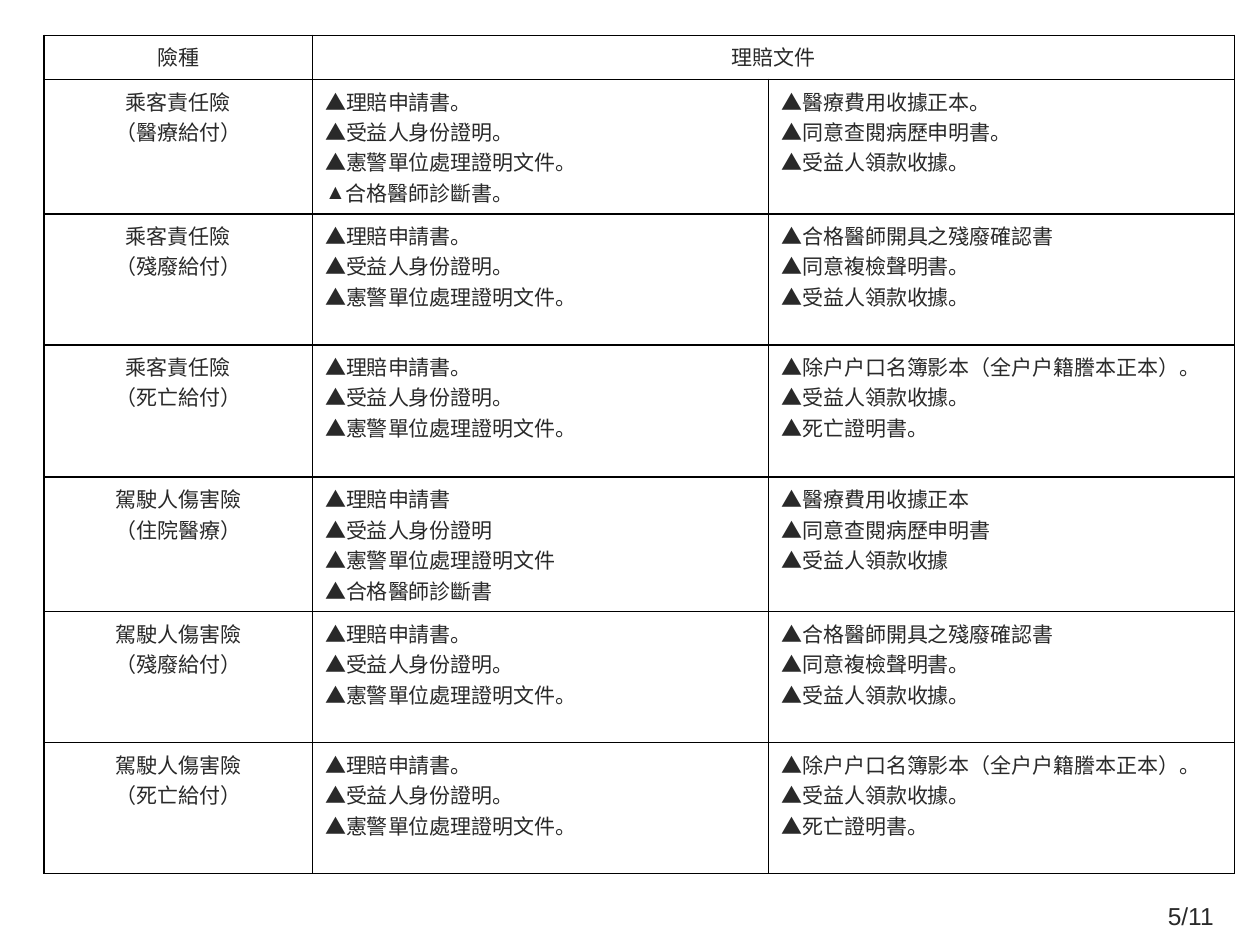
from lxml.etree import SubElement
from pptx import Presentation
from pptx.dml.color import RGBColor
from pptx.enum.text import MSO_AUTO_SIZE, PP_ALIGN
from pptx.oxml.ns import qn
from pptx.util import Inches, Pt

COLORS = {"text": "292929", "line": "000000"}
SERIF, SANS, CJK = "Times New Roman", "Arial", "Noto Sans CJK TC"
MARK = "▲"

# Documents shared by several claims
BASE = ["理賠申請書", "受益人身份證明", "憲警單位處理證明文件"]
DOCTOR = "合格醫師診斷書"
MEDICAL = ["醫療費用收據正本", "同意查閱病歷申明書", "受益人領款收據"]


def mark(items, stop="。"):
    return [MARK + item + stop for item in items]


DISABLED = [MARK + "合格醫師開具之殘廢確認書"] + mark(["同意複檢聲明書", "受益人領款收據"])
DEATH = mark(["除戶戶口名簿影本（全戶戶籍謄本正本）", "受益人領款收據", "死亡證明書"])
RIDER, DRIVER = "乘客責任險", "駕駛人傷害險"

CLAIMS = [
    ([RIDER, "（醫療給付）"], mark(BASE) + [DOCTOR + "。"], mark(MEDICAL)),
    ([RIDER, "（殘廢給付）"], mark(BASE), DISABLED),
    ([RIDER, "（死亡給付）"], mark(BASE), DEATH),
    ([DRIVER, "（住院醫療）"], mark(BASE + [DOCTOR], ""), mark(MEDICAL, "")),
    ([DRIVER, "（殘廢給付）"], mark(BASE), DISABLED),
    ([DRIVER, "（死亡給付）"], mark(BASE), DEATH),
]
COLS = [2.13, 3.62, 3.7]
ROWS = [0.35, 1.05, 1.04, 1.05, 1.05, 1.04, 1.04]


def style(para, font, size):
    for run in para.runs:
        run.font.name = font
        run.font.size = Pt(size)
        run.font.color.rgb = RGBColor.from_string(COLORS["text"])
        SubElement(run.font._element, qn("a:ea"), typeface=CJK)


def add_bullet(para):
    props = para._p.get_or_add_pPr()
    props.set("marL", "0")
    props.set("indent", "0")
    SubElement(props, qn("a:buFont"), typeface=SERIF)
    SubElement(props, qn("a:buChar"), char=MARK)


def add_border(cell):
    props = cell._tc.get_or_add_tcPr()
    for side in ("lnL", "lnR", "lnT", "lnB"):
        line = SubElement(props, qn("a:" + side), w=str(Pt(1)))
        fill = SubElement(line, qn("a:solidFill"))
        SubElement(fill, qn("a:srgbClr"), val=COLORS["line"])


def fill_cell(cell, lines, font, align=None):
    cell.text_frame.text = "\n".join(lines)
    for para in cell.text_frame.paragraphs:
        para.alignment = align
        # A document without its own mark gets a real bullet
        if align is None and not para.text.startswith(MARK):
            add_bullet(para)
        style(para, font, 12)


def add_claims(slide, left, top, width, height):
    frame = slide.shapes.add_table(len(ROWS), len(COLS), left, top, width, height)
    table = frame.table
    table.first_row = table.horz_banding = False
    for col, size in zip(table.columns, COLS):
        col.width = Inches(size)
    for row, size in zip(table.rows, ROWS):
        row.height = Inches(size)
    for cell in table.iter_cells():
        add_border(cell)
        cell.fill.background()

    # Header
    table.cell(0, 1).merge(table.cell(0, 2))
    for col, title in enumerate(["險種", "理賠文件"]):
        fill_cell(table.cell(0, col), [title], SERIF, PP_ALIGN.CENTER)

    # One row for each claim
    for row, (name, first, second) in enumerate(CLAIMS, 1):
        fill_cell(table.cell(row, 0), name, SERIF, PP_ALIGN.CENTER)
        fill_cell(table.cell(row, 1), first, CJK)
        fill_cell(table.cell(row, 2), second, CJK)


def add_page(slide, left, top, width, height):
    frame = slide.shapes.add_textbox(left, top, width, height).text_frame
    frame.word_wrap = True
    frame.auto_size = MSO_AUTO_SIZE.SHAPE_TO_FIT_TEXT
    frame.text = "5/11"
    style(frame.paragraphs[0], SANS, 14)


def main():
    deck = Presentation()
    deck.slide_width, deck.slide_height = Inches(10), Inches(7.5)
    slide = deck.slides.add_slide(deck.slide_layouts[6])
    add_claims(slide, Inches(0.35), Inches(0.28), Inches(sum(COLS)), Inches(sum(ROWS)))
    add_page(slide, Inches(9.17), Inches(7.1), Inches(0.83), Inches(0.33))
    deck.save("out.pptx")


if __name__ == "__main__":
    main()
